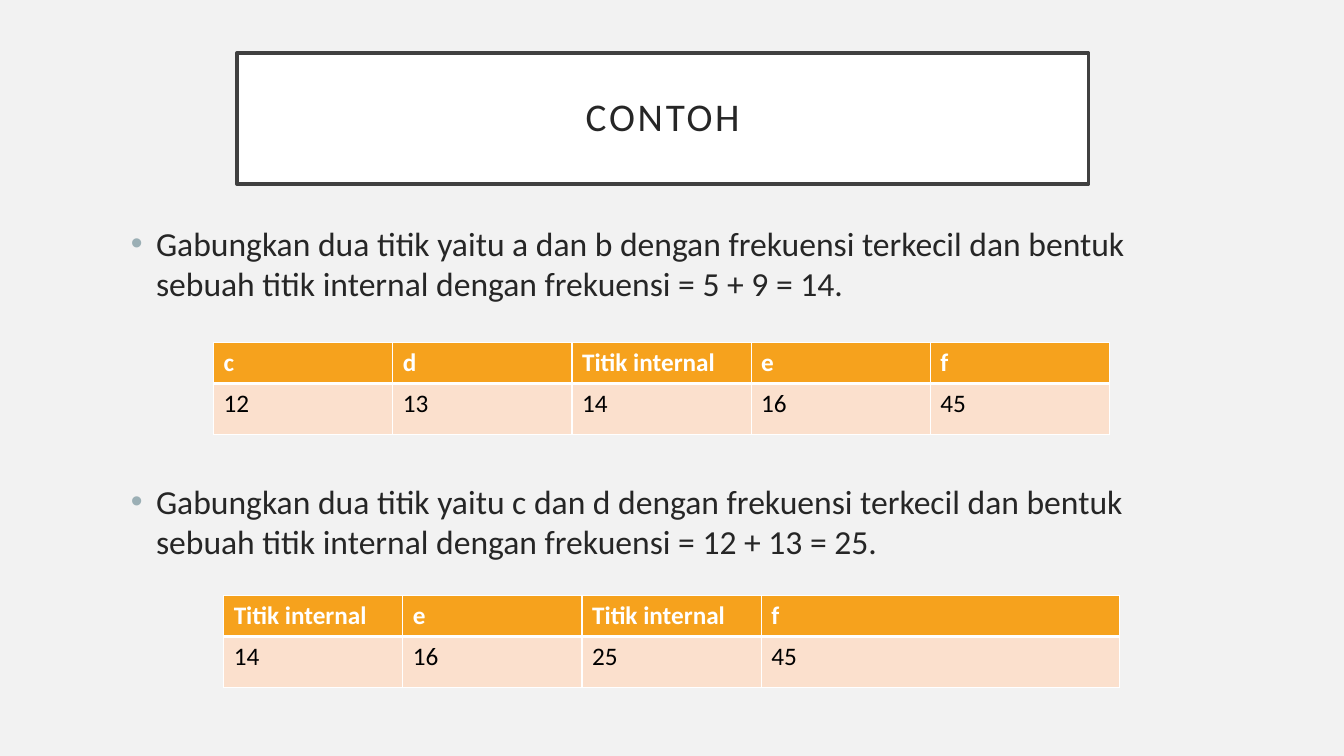
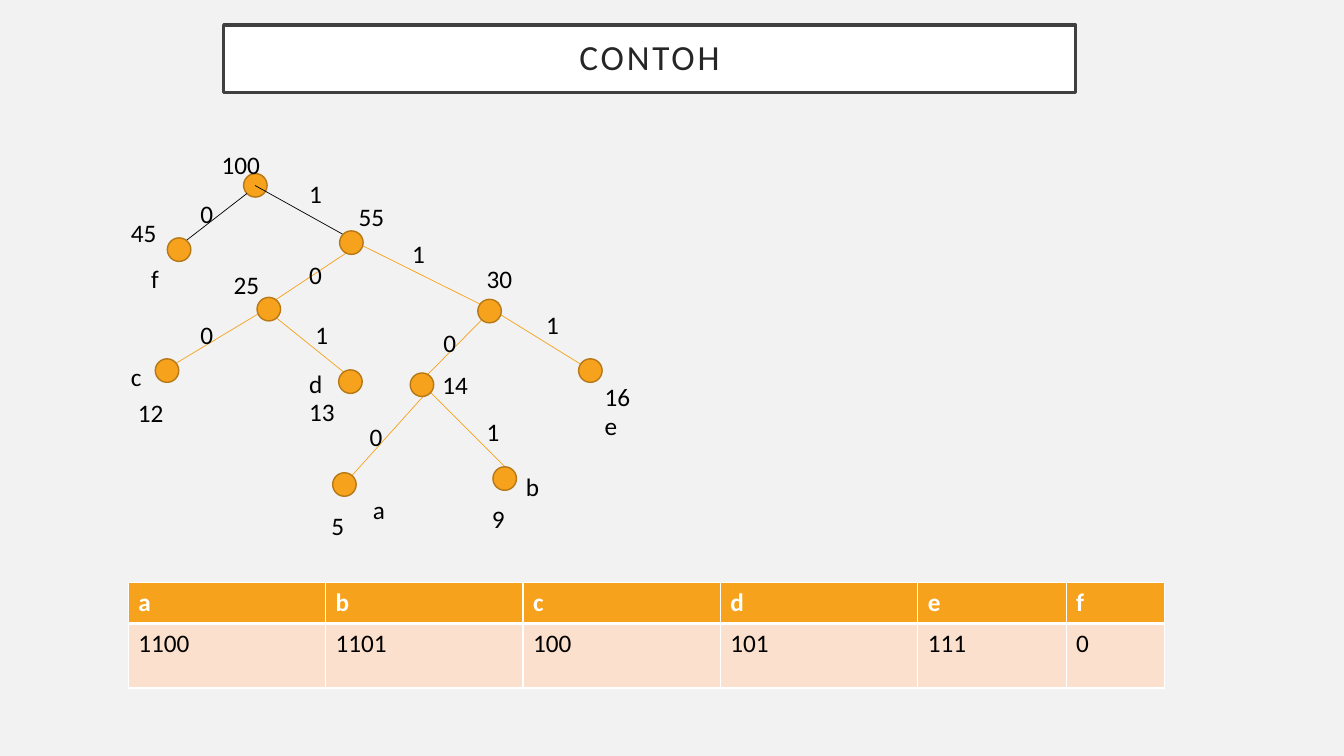
from lxml.etree import SubElement
from pptx import Presentation
from pptx.dml.color import RGBColor
from pptx.enum.shapes import MSO_CONNECTOR as Connector, MSO_SHAPE as Shape
from pptx.enum.text import MSO_ANCHOR as Anchor, PP_ALIGN as Align
from pptx.oxml.ns import qn
from pptx.util import Pt

FONT = "Calibri"
COLORS = {
    "background": "F2F2F2",
    "white": "FFFFFF",
    "frame": "404040",
    "ink": "262626",
    "black": "000000",
    "bullet": "9BAFB5",
    "orange": "F6A21D",
    "node_edge": "B67815",
    "peach": "FBE0CD",
}
NODE_SIZE = 16.8
LABEL_HEIGHT = 28.8
HEADER_HEIGHT = 29.2

ROOT = (88, 21)
NODES = [
    (156.6, 61.9), (33.5, 66.9), (97.6, 109.4), (255.3, 110.8), (207, 163.4),
    (151.6, 234.7), (266.1, 230.4), (327.3, 153.3), (155.9, 161.2), (24.9, 153.3),
]
ROOT_BRANCHES = [
    (90.4, 35.2, 39.3, 74.8),
    (96.2, 29.5, 167.4, 69.1),
]
BRANCHES = [
    (173.2, 69.8, 104.8, 115.2),
    (163.1, 67.6, 271.8, 121.6),
    (108.4, 115.2, 30.6, 162),
    (101.2, 115.9, 171, 172),
    (270.4, 113, 212.1, 172),
    (257.4, 113, 336.6, 162),
    (223.6, 172, 165.3, 236.8),
    (209.9, 165.6, 282.6, 238.3),
]
FREQUENCIES = [
    ("100", 65.2, 0, 67), ("45", 0.4, 48.9, 41), ("55", 163.1, 37.4, 39),
    ("25", 73.8, 85.6, 39), ("30", 254.6, 81.3, 39), ("12", 5.4, 177.1, 39),
    ("13", 127.8, 176.4, 39), ("14", 222.9, 157.6, 39), ("16", 338.8, 165.6, 39),
    ("5", 143.7, 257.7, 39), ("9", 258.2, 252.7, 39),
]
BITS = [
    ("0", 50.1, 35.2, 43), ("1", 127.8, 20.8, 24), ("0", 127.8, 78.4, 24),
    ("1", 201.3, 64, 33), ("0", 50.1, 121.6, 24), ("1", 132.2, 121.6, 27),
    ("0", 223.6, 127.4, 40), ("1", 297, 114.4, 24), ("0", 171, 194.4, 47),
    ("1", 254.6, 190.8, 42),
]
LETTERS = [
    ("a", 173.2, 246.9, 28), ("b", 282.6, 230.4, 44), ("c", 0.4, 151.2, 30),
    ("d", 127.8, 156.2, 35), ("e", 338.8, 186.4, 53), ("f", 14.8, 81.3, 35),
]


def rgb(name):
    return RGBColor.from_string(COLORS[name])


def write(paragraph, text, size=18, color="black", bold=False, align=Align.LEFT,
          spacing=None, before=None, tracking=None):
    paragraph.alignment = align
    if spacing:
        paragraph.line_spacing = spacing
    if before is not None:
        paragraph.space_before = Pt(before)
    run = paragraph.add_run()
    run.text = text
    font = run.font
    font.name, font.size, font.bold = FONT, Pt(size), bold
    font.color.rgb = rgb(color)
    if tracking:
        font._element.set("spc", str(tracking * 100))


def add_bullet(paragraph):
    properties = paragraph._p.get_or_add_pPr()
    properties.set("marL", str(Pt(18)))
    properties.set("indent", str(-Pt(18)))
    color = SubElement(properties, qn("a:buClr"))
    SubElement(color, qn("a:srgbClr"), val=COLORS["bullet"])
    SubElement(properties, qn("a:buFont"), typeface="Arial")
    SubElement(properties, qn("a:buChar"), char="•")


def add_solid(slide, kind, box, fill, line, line_width):
    solid = slide.shapes.add_shape(kind, *map(Pt, box))
    solid.shadow.inherit = False
    solid.fill.solid()
    solid.fill.fore_color.rgb = rgb(fill)
    solid.line.color.rgb = rgb(line)
    solid.line.width = Pt(line_width)
    return solid


def add_text_area(slide, box):
    frame = slide.shapes.add_textbox(*map(Pt, box)).text_frame
    frame.word_wrap = True
    return frame


def add_title(slide, text, box, size):
    banner = add_solid(slide, Shape.RECTANGLE, box, "white", "frame", 2.5)
    frame = banner.text_frame
    frame.word_wrap = True
    frame.vertical_anchor = Anchor.MIDDLE
    frame.margin_left = frame.margin_right = Pt(14.4)
    frame.margin_top = frame.margin_bottom = Pt(14.4)
    write(frame.paragraphs[0], text, size=size, color="ink", align=Align.CENTER,
          spacing=0.9, tracking=2)


def add_steps(slide, steps, box, gap):
    frame = add_text_area(slide, box)
    for index, step in enumerate(steps):
        paragraph = frame.add_paragraph() if index else frame.paragraphs[0]
        write(paragraph, step, size=24, color="ink", before=gap if index else 10)
        add_bullet(paragraph)


def add_borders(cell, bottom):
    properties = cell._tc.get_or_add_tcPr()
    for side, width in (("L", 1), ("R", 1), ("T", 1), ("B", bottom)):
        border = SubElement(properties, qn(f"a:ln{side}"), w=str(Pt(width)))
        fill = SubElement(border, qn("a:solidFill"))
        SubElement(fill, qn("a:srgbClr"), val=COLORS["white"])


def add_code_table(slide, rows, widths, left, top, value_height):
    heights = (HEADER_HEIGHT, value_height)
    table = slide.shapes.add_table(
        len(rows), len(widths), Pt(left), Pt(top), Pt(sum(widths)), Pt(sum(heights))
    ).table
    for column, width in zip(table.columns, widths):
        column.width = Pt(width)
    for index, (values, height) in enumerate(zip(rows, heights)):
        header = index == 0
        table.rows[index].height = Pt(height)
        for cell, value in zip(table.rows[index].cells, values):
            add_borders(cell, 3 if header else 1)
            cell.fill.solid()
            cell.fill.fore_color.rgb = rgb("orange" if header else "peach")
            write(cell.text_frame.paragraphs[0], value, bold=header,
                  color="white" if header else "black")


def add_tree(slide, left, top):
    def add_node(x, y):
        add_solid(slide, Shape.OVAL, (left + x, top + y, NODE_SIZE, NODE_SIZE),
                  "orange", "node_edge", 1)

    def add_branch(x1, y1, x2, y2, color):
        branch = slide.shapes.add_connector(
            Connector.STRAIGHT, Pt(left + x1), Pt(top + y1), Pt(left + x2), Pt(top + y2))
        branch.line.color.rgb = rgb(color)
        branch.line.width = Pt(0.5)
        SubElement(branch._element.spPr, qn("a:effectLst"))

    add_node(*ROOT)
    for branches, color in ((ROOT_BRANCHES, "black"), (BRANCHES, "orange")):
        for ends in branches:
            add_branch(*ends, color)
    for place in NODES:
        add_node(*place)
    for text, x, y, width in FREQUENCIES + BITS + LETTERS:
        frame = add_text_area(slide, (left + x, top + y, width, LABEL_HEIGHT))
        write(frame.paragraphs[0], text)


def new_slide(deck):
    slide = deck.slides.add_slide(deck.slide_layouts[6])
    slide.background.fill.solid()
    slide.background.fill.fore_color.rgb = rgb("background")
    return slide


def build_merge_slide(deck):
    slide = new_slide(deck)
    add_title(slide, "CONTOH", (169.2, 38, 608.4, 93.6), 28)
    add_steps(slide, [
        "Gabungkan dua titik yaitu a dan b dengan frekuensi terkecil dan bentuk "
        "sebuah titik internal dengan frekuensi = 5 + 9 = 14.",
        "Gabungkan dua titik yaitu c dan d dengan frekuensi terkecil dan bentuk "
        "sebuah titik internal dengan frekuensi = 12 + 13 = 25.",
    ], (86.4, 155.5, 772.6, 375), 126.5)
    add_code_table(slide, [("c", "d", "Titik internal", "e", "f"),
                           ("12", "13", "14", "16", "45")],
                   [128] * 5, 152.6, 244.8, 36.5)
    add_code_table(slide, [("Titik internal", "e", "Titik internal", "f"),
                           ("14", "16", "25", "45")],
                   [128] * 3 + [256], 159.8, 425.5, 36.5)


def build_tree_slide(deck):
    slide = new_slide(deck)
    add_title(slide, "CONTOH", (159.8, 18, 608.4, 48.2), 25.2)
    add_tree(slide, 86, 103)
    add_code_table(slide, ["abcdef", ("1100", "1101", "100", "101", "111", "0")],
                   [141] * 4 + [106, 70], 91.6, 416.2, 46)


def main():
    deck = Presentation()
    deck.slide_width, deck.slide_height = Pt(960), Pt(540)
    build_merge_slide(deck)
    build_tree_slide(deck)
    deck.save("out.pptx")


if __name__ == "__main__":
    main()
